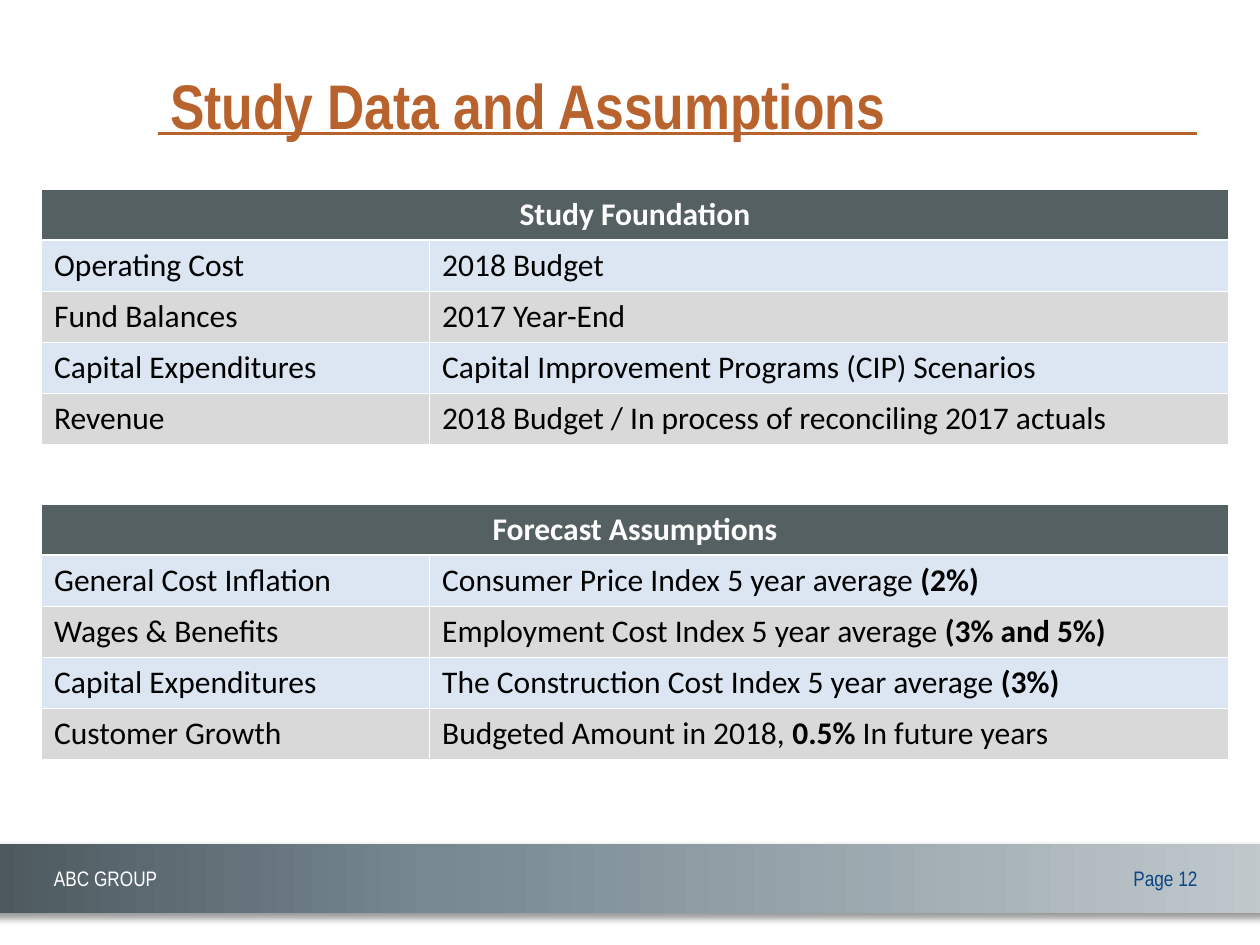
from lxml import etree
from pptx import Presentation
from pptx.dml.color import RGBColor
from pptx.enum.shapes import MSO_CONNECTOR, MSO_SHAPE
from pptx.enum.text import MSO_ANCHOR, MSO_AUTO_SIZE, PP_ALIGN
from pptx.oxml import parse_xml
from pptx.oxml.ns import qn
from pptx.util import Inches, Pt

LEFT, CENTER, RIGHT = PP_ALIGN.LEFT, PP_ALIGN.CENTER, PP_ALIGN.RIGHT
MIDDLE = MSO_ANCHOR.MIDDLE
FIT, FIXED = MSO_AUTO_SIZE.SHAPE_TO_FIT_TEXT, MSO_AUTO_SIZE.NONE
RECT, STRAIGHT = MSO_SHAPE.RECTANGLE, MSO_CONNECTOR.STRAIGHT

RUST = RGBColor(0xB8, 0x63, 0x2E)
NAVY = RGBColor(0x0B, 0x45, 0x85)
SLATE = RGBColor(0x55, 0x60, 0x63)
BLUE = RGBColor(0xDC, 0xE6, 0xF2)
GRAY = RGBColor(0xD9, 0xD9, 0xD9)
WHITE = RGBColor(0xFF, 0xFF, 0xFF)
BLACK = RGBColor(0x00, 0x00, 0x00)
NARROW, BODY = "Arial Narrow", "Calibri"
NS = "http://schemas.openxmlformats.org/drawingml/2006/main"


def write(frame, text, size=18, font=BODY, color=BLACK, bold=False, align=LEFT):
    """Fill the first paragraph; parts between ** marks are bold."""
    para = frame.paragraphs[0]
    para.alignment = align
    for i, part in enumerate(text.split("**")):
        if part:
            run = para.add_run()
            run.text = part
            run.font.size = Pt(size)
            run.font.name = font
            run.font.color.rgb = color
            run.font.bold = bold or i % 2 == 1


prs = Presentation()
prs.slide_width, prs.slide_height = Inches(10), Inches(7.5)
slide = prs.slides.add_slide(prs.slide_layouts[5])
shapes = slide.shapes

# Footer band
band = shapes.add_shape(RECT, Inches(-0.17), Inches(6.7), Inches(10.33), Inches(0.55))
band.line.fill.background()
stops = "".join(
    f'<a:gs pos="{pos}000"><a:srgbClr val="{color}"/></a:gs>'
    for pos, color in [(0, "C1C9CD"), (65, "778891"), (100, "4B575D")]
)
band.fill.background()
props = band._element.spPr
props.replace(props.find(qn("a:noFill")), parse_xml(
    f'<a:gradFill xmlns:a="{NS}" rotWithShape="1"><a:gsLst>{stops}</a:gsLst>'
    '<a:lin ang="10800000" scaled="0"/></a:gradFill>'))
props.append(parse_xml(
    f'<a:effectLst xmlns:a="{NS}"><a:outerShdw blurRad="{Pt(4)}" dist="{Pt(3)}" '
    'dir="2700000" algn="tl" rotWithShape="0"><a:srgbClr val="000000">'
    '<a:alpha val="40000"/></a:srgbClr></a:outerShdw></a:effectLst>'))

footers = [
    ("Page 12 ", 8.83, 0.81, NAVY, RIGHT),
    ("ABC GROUP", 0.33, 1.42, WHITE, LEFT),
]
for text, left, width, color, align in footers:
    box = shapes.add_textbox(Inches(left), Inches(6.82), Inches(width), Inches(0.3))
    box.text_frame.word_wrap = True
    box.text_frame.auto_size = FIT
    write(box.text_frame, text, size=12, font=NARROW, color=color, align=align)

# Title and its rule
rule = shapes.add_connector(STRAIGHT, Inches(1.25), Inches(1.06), Inches(9.5), Inches(1.06))
rule.line.color.rgb = RUST
rule.line.width = Pt(1.5)
etree.SubElement(rule._element.spPr, qn("a:effectLst"))

title = shapes.title
title.left, title.top = Inches(1.25), Inches(0.33)
title.width, title.height = Inches(8.25), Inches(1)
title.text_frame.auto_size = FIXED
title.text_frame.vertical_anchor = MIDDLE
write(title.text_frame, "Study Data and Assumptions", size=36, font=NARROW,
      color=RUST, bold=True)

# Tables
tables = [
    (1.5, "Study Foundation", [
        ("Operating Cost", "2018 Budget"),
        ("Fund Balances", "2017 Year-End"),
        ("Capital Expenditures", "Capital Improvement Programs (CIP) Scenarios"),
        ("Revenue", "2018 Budget / In process of reconciling 2017 actuals"),
    ]),
    (4, "Forecast Assumptions", [
        ("General Cost Inflation", "Consumer Price Index 5 year average **(2%)**"),
        ("Wages & Benefits", "Employment Cost Index 5 year average **(3% and 5%)**"),
        ("Capital Expenditures", "The Construction Cost Index 5 year average **(3%)**"),
        ("Customer Growth", "Budgeted Amount in 2018, **0.5%** In future years"),
    ]),
]
for top, head, rows in tables:
    table = shapes.add_table(len(rows) + 1, 2, Inches(0.33), Inches(top),
                             Inches(9.42), Inches(2.03)).table
    table.columns[0].width, table.columns[1].width = Inches(3.08), Inches(6.34)
    first = table.cell(0, 0)
    first.merge(table.cell(0, 1))
    first.fill.solid()
    first.fill.fore_color.rgb = SLATE
    write(first.text_frame, head, color=WHITE, bold=True, align=CENTER)
    for r, row in enumerate(rows, 1):
        for c, text in enumerate(row):
            cell = table.cell(r, c)
            cell.fill.solid()
            cell.fill.fore_color.rgb = BLUE if r % 2 else GRAY
            write(cell.text_frame, text)

prs.save("out.pptx")
